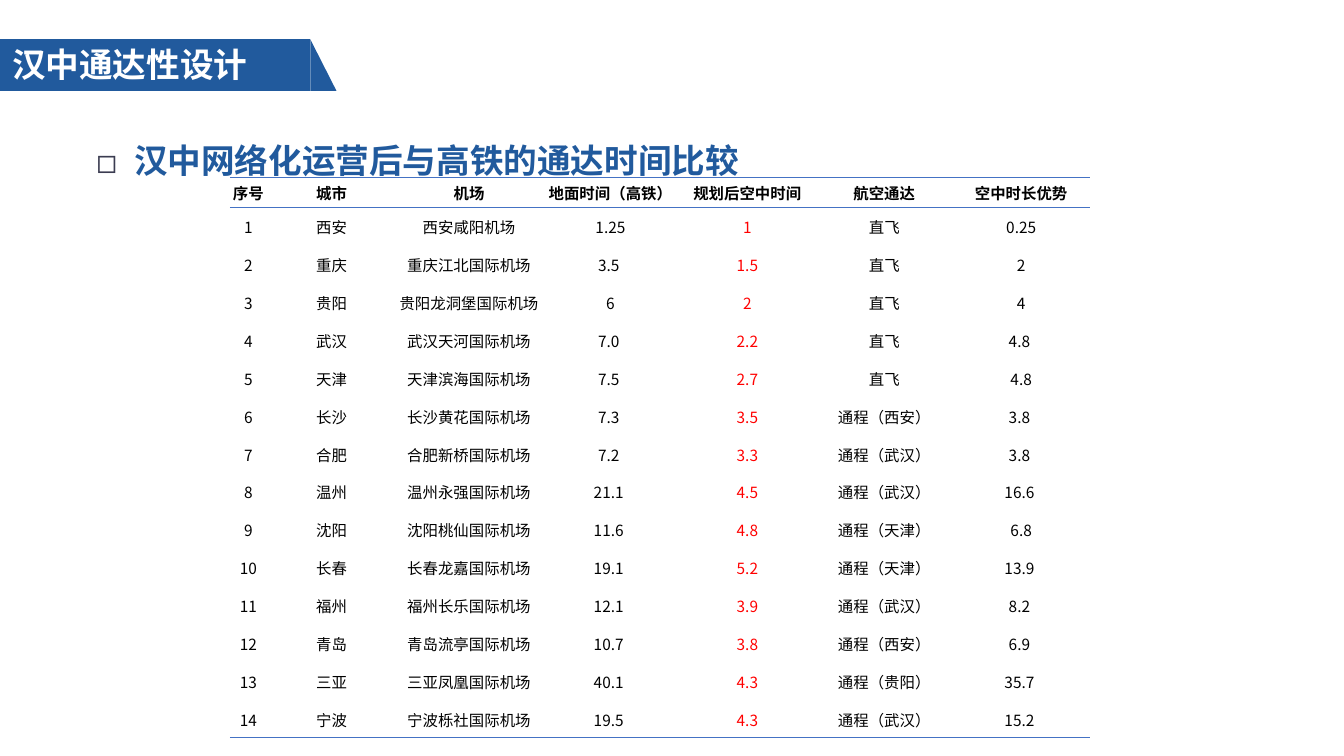
from dataclasses import dataclass

from lxml.etree import SubElement
from pptx import Presentation
from pptx.dml.color import RGBColor as RGB
from pptx.enum.shapes import MSO_SHAPE as Shape
from pptx.enum.text import MSO_ANCHOR as Anchor, MSO_AUTO_SIZE as AutoSize, PP_ALIGN as Align
from pptx.oxml.ns import qn
from pptx.util import Cm, Pt


@dataclass(frozen=True)
class Theme:
    font: str = "Noto Sans CJK SC"
    blue: str = "215A9D"
    white: str = "FFFFFF"
    black: str = "000000"
    red: str = "FF0000"
    bullet: str = "3B3C51"
    rule: str = "4472C4"
    heading_size: int = 24
    table_size: int = 11
    rule_width: int = 1


THEME = Theme()
NO_TABLE_STYLE = "{2D5ABB26-0587-4C30-8999-92F81FD0307C}"
PLANNED_TIME_COLUMN = 4
COLUMN_WIDTHS = [0.94, 3.25, 3.68] + [3.45] * 4
HEADER_HEIGHT = 0.76
TABLE_HEIGHT = 14.12
HEADER = ("序号", "城市", "机场", "地面时间（高铁）", "规划后空中时间", "航空通达", "空中时长优势")
ROUTES = [
    ("西安", "西安咸阳机场", "1.25", "1", "直飞", "0.25"),
    ("重庆", "重庆江北国际机场", "3.5 ", "1.5", "直飞", "2"),
    ("贵阳", "贵阳龙洞堡国际机场", "6", "2", "直飞", "4"),
    ("武汉", "武汉天河国际机场", "7.0 ", "2.2", "直飞", "4.8 "),
    ("天津", "天津滨海国际机场", "7.5 ", "2.7", "直飞", "4.8"),
    ("长沙", "长沙黄花国际机场", "7.3 ", "3.5", "通程（西安）", "3.8 "),
    ("合肥", "合肥新桥国际机场", "7.2 ", "3.3", "通程（武汉）", "3.8 "),
    ("温州", "温州永强国际机场", "21.1 ", "4.5", "通程（武汉）", "16.6 "),
    ("沈阳", "沈阳桃仙国际机场", "11.6 ", "4.8", "通程（天津）", "6.8"),
    ("长春", "长春龙嘉国际机场", "19.1 ", "5.2", "通程（天津）", "13.9 "),
    ("福州", "福州长乐国际机场", "12.1 ", "3.9", "通程（武汉）", "8.2 "),
    ("青岛", "青岛流亭国际机场", "10.7 ", "3.8", "通程（西安）", "6.9 "),
    ("三亚", "三亚凤凰国际机场", "40.1 ", "4.3", "通程（贵阳）", "35.7 "),
    ("宁波", "宁波栎社国际机场", "19.5 ", "4.3", "通程（武汉）", "15.2 "),
]


def format_runs(p, size, color, bold):
    for r in p.runs:
        r.font.size = Pt(size)
        r.font.bold = bold
        r.font.color.rgb = RGB.from_string(color)
        r.font.name = THEME.font
        SubElement(r.font._element, qn("a:ea"), typeface=THEME.font)


def add_banner_part(s, kind, left, top, width, height):
    sp = s.shapes.add_shape(kind, Cm(left), Cm(top), Cm(width), Cm(height))
    sp.shadow.inherit = False
    sp.fill.solid()
    sp.fill.fore_color.rgb = RGB.from_string(THEME.blue)
    sp.line.fill.background()


def fill_heading(sp, text, color):
    tf = sp.text_frame
    tf.text = text
    tf.word_wrap = True
    tf.auto_size = AutoSize.SHAPE_TO_FIT_TEXT
    tf.vertical_anchor = Anchor.MIDDLE
    p = tf.paragraphs[0]
    p.alignment = Align.LEFT
    format_runs(p, THEME.heading_size, color, True)
    return p


def place_title(s, text):
    title = s.shapes.title
    title.left, title.top, title.width, title.height = Cm(0.05), Cm(0.97), Cm(6.96), Cm(1.27)
    fill_heading(title, text, THEME.white)
    s.shapes.element.append(title.element)


def add_bullet_heading(s, text):
    sp = s.shapes.add_textbox(Cm(2.18), Cm(2.87), Cm(29.51), Cm(1.8))
    p = fill_heading(sp, text, THEME.blue)
    pPr = p._p.get_or_add_pPr()
    pPr.set("marL", str(Cm(0.95)))
    pPr.set("indent", str(-Cm(0.95)))
    SubElement(SubElement(pPr, qn("a:buClr")), qn("a:srgbClr"), val=THEME.bullet)
    SubElement(pPr, qn("a:buFont"), typeface=THEME.font)
    SubElement(pPr, qn("a:buChar"), char="◻")
    p.alignment = Align.JUSTIFY
    p.line_spacing = 1.5
    p.space_after = Pt(6)


def add_rule(cell, edge):
    ln = SubElement(cell._tc.get_or_add_tcPr(), qn(f"a:{edge}"), w=str(Pt(THEME.rule_width)))
    SubElement(SubElement(ln, qn("a:solidFill")), qn("a:srgbClr"), val=THEME.rule)


def fill_cell(cell, text, color, bold, edges):
    for edge in edges:
        add_rule(cell, edge)
    cell.fill.background()
    cell.margin_left = cell.margin_right = cell.margin_top = Cm(0.03)
    cell.margin_bottom = 0
    cell.vertical_anchor = Anchor.MIDDLE
    p = cell.text_frame.paragraphs[0]
    p.text = text
    p.alignment = Align.CENTER
    format_runs(p, THEME.table_size, color, bold)


def add_route_table(s):
    rows = [HEADER] + [(str(i), *route) for i, route in enumerate(ROUTES, 1)]
    frame = s.shapes.add_table(len(rows), len(HEADER), Cm(5.79), Cm(4.47),
                               Cm(sum(COLUMN_WIDTHS)), Cm(TABLE_HEIGHT))
    table = frame.table
    table.first_row = table.horz_banding = False
    for style in frame.element.iter(qn("a:tableStyleId")):
        style.text = NO_TABLE_STYLE
    for column, width in zip(table.columns, COLUMN_WIDTHS):
        column.width = Cm(width)
    route_height = (TABLE_HEIGHT - HEADER_HEIGHT) / len(ROUTES)
    edges = {0: ("lnT", "lnB"), len(ROUTES): ("lnB",)}
    for i, values in enumerate(rows):
        table.rows[i].height = Cm(route_height if i else HEADER_HEIGHT)
        for j, text in enumerate(values):
            color = THEME.red if i and j == PLANNED_TIME_COLUMN else THEME.black
            fill_cell(table.cell(i, j), text, color, i == 0, edges.get(i, ()))


def main():
    prs = Presentation()
    prs.slide_width, prs.slide_height = Cm(33.87), Cm(19.05)
    s = prs.slides.add_slide(prs.slide_layouts[5])
    add_banner_part(s, Shape.RECTANGLE, 0, 0.99, 7.82, 1.3)
    add_banner_part(s, Shape.RIGHT_TRIANGLE, 7.82, 0.99, 0.66, 1.3)
    add_bullet_heading(s, "汉中网络化运营后与高铁的通达时间比较")
    place_title(s, "汉中通达性设计")
    add_route_table(s)
    prs.save("out.pptx")


if __name__ == "__main__":
    main()
